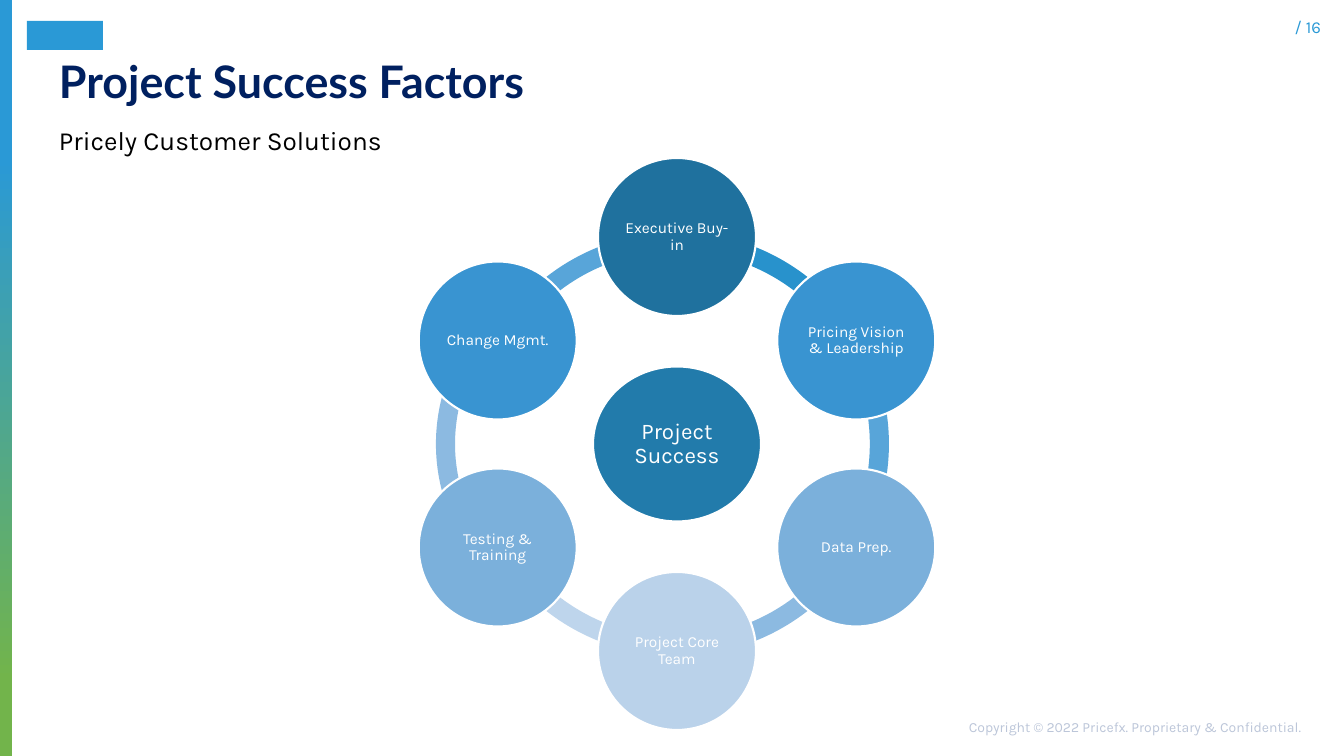
from math import cos, radians, sin

from pptx import Presentation
from pptx.dml.color import RGBColor
from pptx.enum.shapes import MSO_SHAPE
from pptx.enum.text import MSO_ANCHOR, PP_ALIGN
from pptx.util import Pt

RECT, OVAL, ARC = MSO_SHAPE.RECTANGLE, MSO_SHAPE.OVAL, MSO_SHAPE.BLOCK_ARC
LEFT, MID, RIGHT = PP_ALIGN.LEFT, PP_ALIGN.CENTER, PP_ALIGN.RIGHT
TOP, CENTER, BOTTOM = MSO_ANCHOR.TOP, MSO_ANCHOR.MIDDLE, MSO_ANCHOR.BOTTOM
PX = 12192000 / 1344
BLUE, WHITE = "2A99D6", "FFFFFF"

deck = Presentation()
deck.slide_width, deck.slide_height = round(1344 * PX), round(756 * PX)
slide = deck.slides.add_slide(deck.slide_layouts[6])


def draw(kind, x, y, w, h, color, edge=None):
    shape = slide.shapes.add_shape(kind, *(round(n * PX) for n in (x, y, w, h)))
    shape.shadow.inherit = False
    shape.fill.solid()
    shape.fill.fore_color.rgb = RGBColor.from_string(color)
    if edge:
        shape.line.color.rgb = RGBColor.from_string(edge)
        shape.line.width = Pt(1.5)
    else:
        shape.line.fill.background()
    return shape


def write(shape, text, size, color, align, anchor, pads, font="Karla"):
    """Set the text of a shape; pads are left, top, right and bottom in px."""
    frame = shape.text_frame
    frame.word_wrap = True
    frame.vertical_anchor = anchor
    (frame.margin_left, frame.margin_top,
     frame.margin_right, frame.margin_bottom) = (round(n * PX) for n in pads)
    frame.text = text
    para = frame.paragraphs[0]
    para.alignment = align
    run = para.runs[0].font
    run.name, run.size = font, Pt(size)
    run.color.rgb = RGBColor.from_string(color)
    return para


# Side bar and logo block
bar = draw(RECT, 0, 0, 12, 756, BLUE)
bar.fill.gradient()
bar.fill.gradient_angle = 270
for stop, place, color in zip(bar.fill.gradient_stops, (0.21, 0.9), (BLUE, "72B44B")):
    stop.position = place
    stop.color.rgb = RGBColor.from_string(color)
draw(RECT, 27, 21, 76, 29, BLUE)

# Title, subtitle, page number and footer
labels = [
    ((59, 24, 1227, 84), "Project Success Factors", 32, "002060", LEFT, BOTTOM,
     (0, 5, 0, 0), "Lato"),
    ((59, 119, 364, 50), "Pricely Customer Solutions", 18.7, "000000", LEFT, TOP,
     (0, 5, 0, 5), "Karla"),
    ((1264, 12, 67, 33), "/ 16", 12, BLUE, RIGHT, TOP, (10, 5, 10, 5), "Karla"),
    ((807, 717, 496, 22), "Copyright © 2022 Pricefx. Proprietary & Confidential.",
     10, "BCC6D9", RIGHT, TOP, (2, 2, 2, 2), "Karla"),
]
for area, *style in labels:
    box = slide.shapes.add_textbox(*(round(n * PX) for n in area))
    para = write(box, *style)
    if style[-1] == "Lato":
        para.line_spacing = 0.9
        para.runs[0].font.bold = True

# Ring of six arcs, last one first, each spanning 60 degrees
MIDX, MIDY, RING, NODE, REACH = 677, 444, 424, 158, 207
arcs = [(210, "58A5D9", RING), (150, "8CBAE1", 482), (90, "BED5EC", RING),
        (30, "8CBAE1", RING), (330, "58A5D9", RING), (270, "2892CC", RING)]
for start, color, wide in arcs:
    arc = draw(ARC, MIDX - wide / 2, MIDY - RING / 2, wide, RING, color)
    # Angles are stored in units of 0.6 per degree
    arc.adjustments[0] = start * 0.6
    arc.adjustments[1] = (start + 60) % 360 * 0.6
    arc.adjustments[2] = 0.045

# Hub, then the six factors clockwise from the top
discs = [(MIDX, MIDY, 168, 155, "227BAB", "Project Success", 16)]
factors = [("Executive Buy-in", "1F719E"), ("Pricing Vision & Leadership", "3994D1"),
           ("Data Prep.", "7BB0DB"), ("Project Core Team", "BAD2EA"),
           ("Testing & Training", "7BB0DB"), ("Change Mgmt.", "3994D1")]
for i, (name, color) in enumerate(factors):
    turn = radians(60 * i - 90)
    discs.append((MIDX + REACH * cos(turn), MIDY + REACH * sin(turn),
                  NODE, NODE, color, name, 11))
for x, y, w, h, color, name, size in discs:
    disc = draw(OVAL, x - w / 2, y - h / 2, w, h, color, WHITE)
    para = write(disc, name, size, WHITE, MID, CENTER, (2, 2, 2, 2))
    para.line_spacing = 0.9

deck.save("out.pptx")
